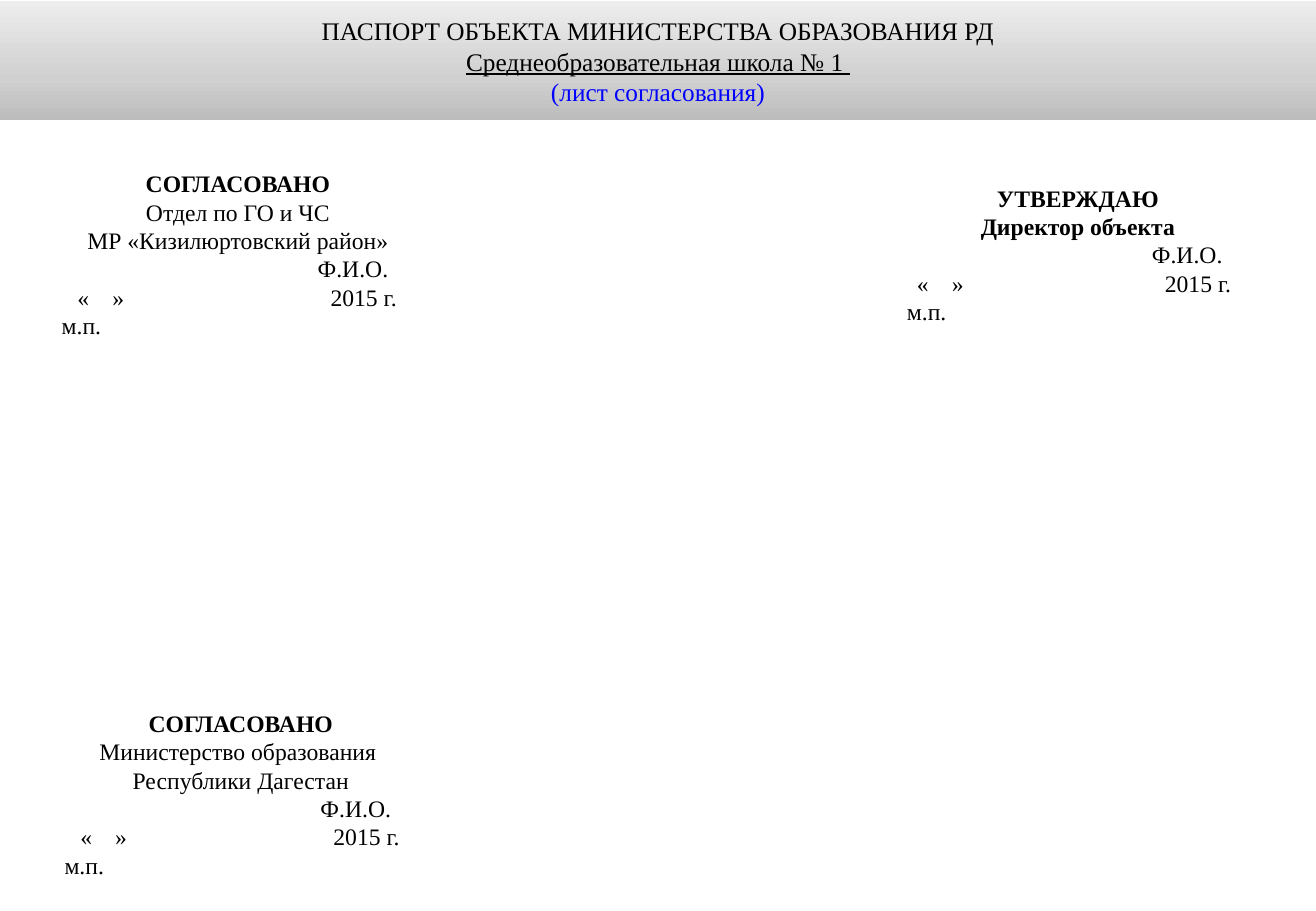
from copy import deepcopy
from dataclasses import dataclass, field

from lxml import etree
from pptx import Presentation
from pptx.dml.color import RGBColor
from pptx.enum.shapes import MSO_SHAPE
from pptx.enum.text import MSO_ANCHOR, MSO_AUTO_SIZE, PP_ALIGN
from pptx.oxml.ns import qn
from pptx.shapes.base import BaseShape
from pptx.slide import Slide
from pptx.text.text import TextFrame
from pptx.util import Cm, Pt

RECT = MSO_SHAPE.RECTANGLE
MIDDLE = MSO_ANCHOR.MIDDLE
NO_FIT = MSO_AUTO_SIZE.NONE
CENTER, LEFT = PP_ALIGN.CENTER, PP_ALIGN.LEFT

BLACK = RGBColor(0x00, 0x00, 0x00)
WHITE = RGBColor(0xFF, 0xFF, 0xFF)
BLUE = RGBColor(0x00, 0x00, 0xFF)
BAND_STOPS = [
    (0, RGBColor(0xBC, 0xBC, 0xBC)),
    (0.35, RGBColor(0xD0, 0xD0, 0xD0)),
    (1, RGBColor(0xED, 0xED, 0xED)),
]

FONT = "Times New Roman"
TITLE_FORMAT = {"name": FONT, "size": Pt(15), "bold": False}
BLOCK_FORMAT = {"name": FONT, "size": Pt(14), "bold": False}
BOLD = {"bold": True}
UNDERLINE = {"underline": True}


@dataclass
class Span:
    text: str
    fmt: dict = field(default_factory=dict)
    color: RGBColor = BLACK


@dataclass
class Line:
    spans: list[Span]
    tabs: tuple[float, ...] = ()


@dataclass
class Approval:
    left: float
    top: float
    heading: list[Span]
    sign_tabs: tuple[float, ...] = (0.65, 5.48)
    date_tabs: tuple[float, ...] = (0.46, 1.19, 5.75)
    stamp_tab: float = 0.13

    def lines(self) -> list[Line]:
        return [Line([span]) for span in self.heading] + [
            Line([Span("\t"), Span("\t", UNDERLINE), Span("Ф.И.О.")], self.sign_tabs),
            Line([Span("\t«\t»\t2015 г.")], self.date_tabs),
            Line([Span("\tм.п.")], (self.stamp_tab,)),
        ]


TITLE = [
    Line([Span("ПАСПОРТ ОБЪЕКТА МИНИСТЕРСТВА ОБРАЗОВАНИЯ РД")]),
    Line([Span("Среднеобразовательная школа № 1 ", UNDERLINE)]),
    Line([Span("(лист согласования)", color=BLUE)]),
]

APPROVALS = [
    Approval(0.91, 3.53, [
        Span("СОГЛАСОВАНО", BOLD),
        Span("Отдел по ГО и ЧС"),
        Span("МР «Кизилюртовский район»"),
    ]),
    Approval(
        18.47, 3.53,
        [Span("УТВЕРЖДАЮ", BOLD), Span("Директор объекта", BOLD)],
        sign_tabs=(0.78, 5.36), date_tabs=(0.45, 1.18, 5.63), stamp_tab=0.24,
    ),
    Approval(0.97, 14.81, [
        Span("СОГЛАСОВАНО", BOLD),
        Span("Министерство образования "),
        Span("Республики Дагестан"),
    ]),
]


def write_lines(tf: TextFrame, lines: list[Line], base: dict) -> None:
    tf.word_wrap = True
    tf.auto_size = NO_FIT
    tf.vertical_anchor = MIDDLE
    for i, line in enumerate(lines):
        p = tf.add_paragraph() if i else tf.paragraphs[0]
        p.alignment = LEFT if line.tabs else CENTER
        if line.tabs:
            tab_list = etree.SubElement(p._p.get_or_add_pPr(), qn("a:tabLst"))
            for pos in line.tabs:
                etree.SubElement(tab_list, qn("a:tab"), pos=str(Cm(pos)), algn="l")
        for span in line.spans:
            r = p.add_run()
            r.text = span.text
            for name, value in {**base, **span.fmt}.items():
                setattr(r.font, name, value)
            r.font.color.rgb = span.color


def place(sp: BaseShape, left: float, top: float, width: float, height: float) -> None:
    sp.left, sp.top, sp.width, sp.height = map(Cm, (left, top, width, height))


def draw_title(s: Slide) -> None:
    sp = s.shapes.title
    place(sp, 0, 0.03, 27.51, 2.49)
    fill = sp.fill
    fill.gradient()
    fill.gradient_angle = 90
    first = sp._element.spPr.find(".//" + qn("a:gs"))
    first.addnext(deepcopy(first))
    for stop, (position, color) in zip(fill.gradient_stops, BAND_STOPS):
        stop.position = position
        stop.color.rgb = color
    write_lines(sp.text_frame, TITLE, TITLE_FORMAT)


def draw_approval(s: Slide, approval: Approval) -> None:
    sp = s.shapes.add_shape(RECT, 0, 0, 0, 0)
    place(sp, approval.left, approval.top, 8.13, 3.58)
    sp.shadow.inherit = False
    sp.fill.background()
    sp.line.color.rgb = WHITE
    sp.line.width = Pt(2)
    write_lines(sp.text_frame, approval.lines(), BLOCK_FORMAT)


def main() -> None:
    prs = Presentation()
    prs.slide_width, prs.slide_height = Cm(27.51), Cm(19.05)
    s = prs.slides.add_slide(prs.slide_layouts[5])
    draw_title(s)
    for approval in APPROVALS:
        draw_approval(s, approval)
    prs.save("out.pptx")


if __name__ == "__main__":
    main()
